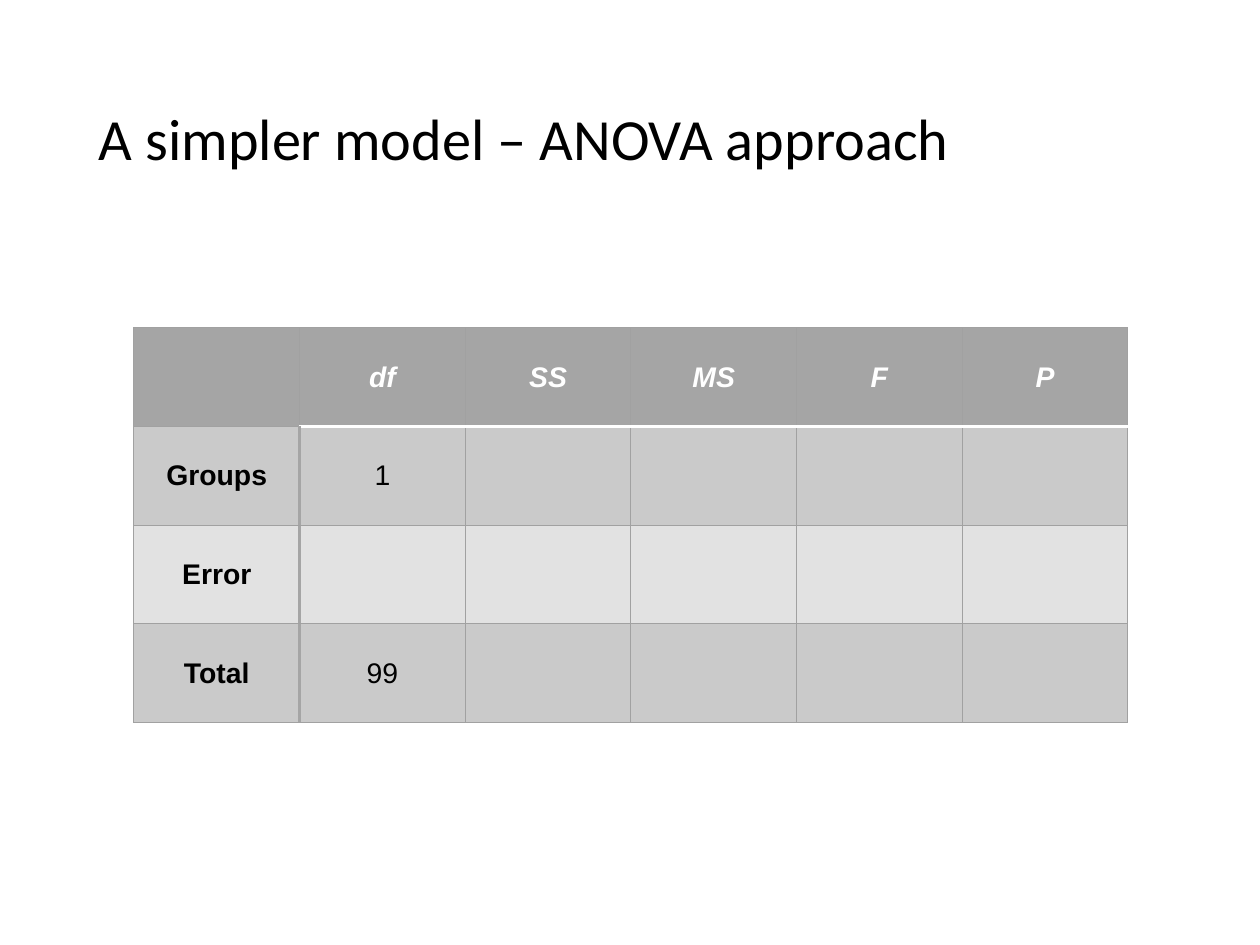
import pptx
import pptx.util
import pptx.dml.color
import pptx.enum.text
import pptx.oxml
import pptx.oxml.ns

Cm = pptx.util.Cm
Pt = pptx.util.Pt


def rgb(color):
    return pptx.dml.color.RGBColor.from_string(color)


def set_borders(cell, borders):
    tcPr = cell._tc.get_or_add_tcPr()
    for i, (side, (color, width)) in enumerate(borders.items()):
        ln = pptx.oxml.parse_xml(
            f'<a:ln{side} {pptx.oxml.ns.nsdecls("a")} w="{Pt(width)}">'
            f'<a:solidFill><a:srgbClr val="{color}"/></a:solidFill></a:ln{side}>'
        )
        tcPr.insert(i, ln)


prs = pptx.Presentation()
prs.slide_width = Cm(28.22)
prs.slide_height = Cm(21.16)
s = prs.slides.add_slide(prs.slide_layouts[6])

title = s.shapes.add_textbox(Cm(1.93), Cm(1.12), Cm(24.33), Cm(4.09))
tf = title.text_frame
tf.word_wrap = True
tf.vertical_anchor = pptx.enum.text.MSO_ANCHOR.MIDDLE
tf.margin_left = tf.margin_right = tf.margin_top = tf.margin_bottom = Cm(0.28)
p = tf.paragraphs[0]
p.text = "A simpler model – ANOVA approach"
p.line_spacing = 0.9
p.font.name = "Calibri"
p.font.size = Pt(37)
p.font.color.rgb = rgb("000000")

rows = [
    ["", "df", "SS", "MS", "F", "P"],
    ["Groups", "1", "", "", "", ""],
    ["Error", "", "", "", "", ""],
    ["Total", "99", "", "", "", ""],
]
row_fills = ["A5A5A5", "CACACA", "E2E2E2", "CACACA"]
thin = ("A1A1A1", 0.75)
header_rule = ("FFFFFF", 2)
label_rule = ("A5A5A5", 2)

table = s.shapes.add_table(
    len(rows), len(rows[0]), Cm(3), Cm(7.34), Cm(22.25), Cm(8.84)
).table
for column in table.columns:
    column.width = Cm(3.71)
for row in table.rows:
    row.height = Cm(2.21)

for i, texts in enumerate(rows):
    for j, text in enumerate(texts):
        header, label = i == 0, j == 0
        cell = table.cell(i, j)
        cell.vertical_anchor = pptx.enum.text.MSO_ANCHOR.MIDDLE
        cell.fill.solid()
        cell.fill.fore_color.rgb = rgb(row_fills[i])
        p = cell.text_frame.paragraphs[0]
        p.text = text
        p.alignment = pptx.enum.text.PP_ALIGN.CENTER
        p.font.name = "Arial"
        p.font.size = Pt(18)
        p.font.bold = header or label
        p.font.italic = header
        p.font.color.rgb = rgb("FFFFFF" if header else "000000")
        set_borders(cell, {
            "L": label_rule if j == 1 and not header else thin,
            "R": label_rule if label and not header else thin,
            "T": header_rule if i == 1 and not label else thin,
            "B": header_rule if header and not label else thin,
        })

prs.save("out.pptx")
